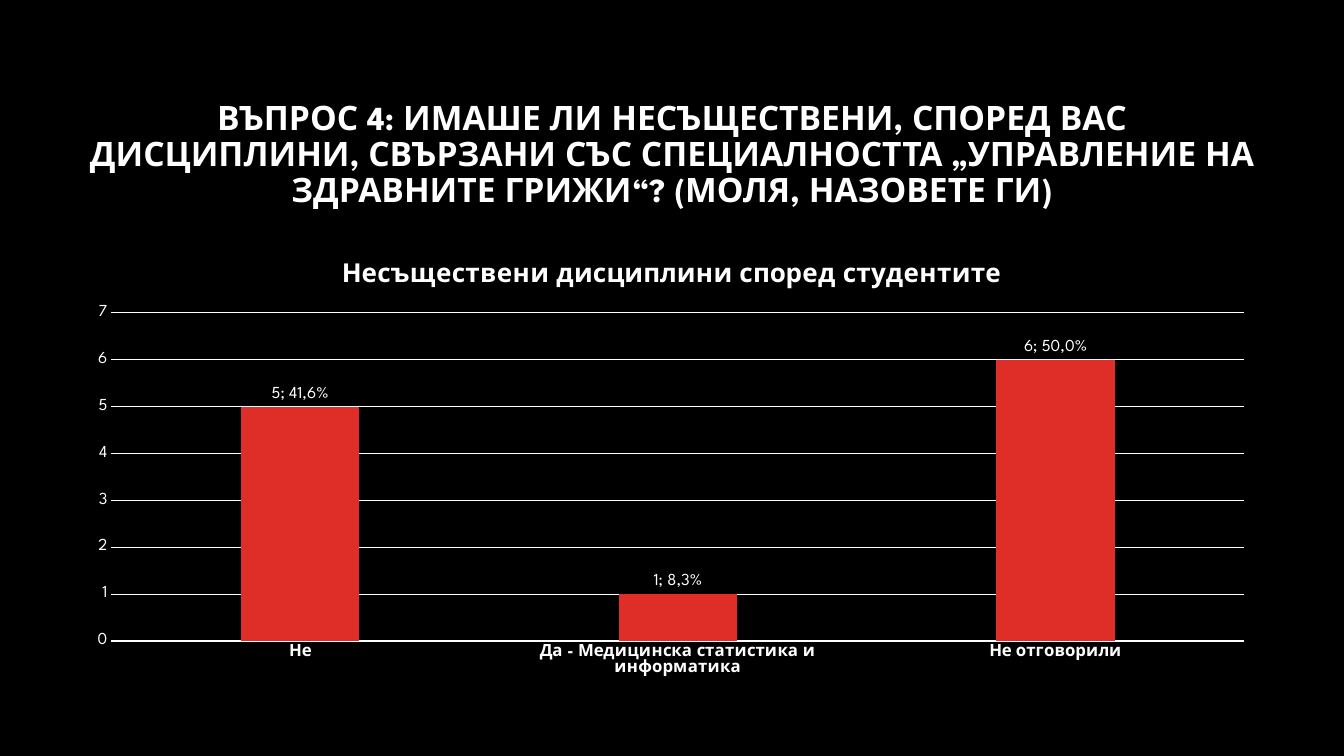
from lxml import etree
from pptx import Presentation
from pptx.chart import data as chart_data
from pptx.dml.color import RGBColor
from pptx.enum import chart as ch, text as tx
from pptx.oxml import ns
from pptx.util import Inches, Pt

COLORS = {"background": "000000", "light": "FFFFFF", "bar": "DF2E28"}
FONT = "League Spartan"
QUESTION = ("ВЪПРОС 4: ИМАШЕ ЛИ НЕСЪЩЕСТВЕНИ, СПОРЕД ВАС ДИСЦИПЛИНИ, "
            "СВЪРЗАНИ СЪС СПЕЦИАЛНОСТТА „УПРАВЛЕНИЕ НА ЗДРАВНИТЕ ГРИЖИ“? "
            "(МОЛЯ, НАЗОВЕТЕ ГИ)")
CHART_TITLE = "Несъществени дисциплини според студентите"
ANSWERS = [
    ("Не", 5, "5; 41,6%"),
    ("Да - Медицинска статистика и информатика", 1, "1; 8,3%"),
    ("Не отговорили", 6, "6; 50,0%"),
]
# Inner plot area as fractions of the chart
PLOT_LAYOUT = {"x": 0.03, "y": 0.16, "w": 0.95, "h": 0.74}


def color(name):
    return RGBColor.from_string(COLORS[name])


def set_attributes(target, **values):
    for name, value in values.items():
        setattr(target, name, value)


def format_font(font, size, bold=False):
    set_attributes(font, name=FONT, size=Pt(size), bold=bold)
    font.color.rgb = color("light")


def format_line(line):
    line.color.rgb = color("light")
    line.width = Pt(0.75)


def add_question(slide):
    question = slide.shapes.title
    set_attributes(question, left=Inches(0.75), top=Inches(0.84),
                   width=Inches(11.83), height=Inches(1.41))
    frame = question.text_frame
    set_attributes(frame, text=QUESTION, word_wrap=True,
                   auto_size=tx.MSO_AUTO_SIZE.NONE,
                   vertical_anchor=tx.MSO_ANCHOR.MIDDLE)
    paragraph = frame.paragraphs[0]
    set_attributes(paragraph, alignment=tx.PP_ALIGN.CENTER, line_spacing=0.9)
    format_font(paragraph.runs[0].font, 24, True)


def format_axes(chart):
    for axis, bold in ((chart.category_axis, True), (chart.value_axis, False)):
        set_attributes(axis, major_tick_mark=ch.XL_TICK_MARK.NONE,
                       minor_tick_mark=ch.XL_TICK_MARK.NONE)
        format_font(axis.tick_labels.font, 12, bold)
    format_line(chart.category_axis.format.line)

    values = chart.value_axis
    set_attributes(values, minimum_scale=0, maximum_scale=7, major_unit=1,
                   has_major_gridlines=True)
    values.format.line.fill.background()
    format_line(values.major_gridlines.format.line)


def label_bars(series):
    for index, (_, _, label) in enumerate(ANSWERS):
        data_label = series.points[index].data_label
        data_label.text_frame.text = label
        data_label.position = ch.XL_LABEL_POSITION.OUTSIDE_END
        format_font(data_label.text_frame.paragraphs[0].runs[0].font, 12)


def place_plot(chart):
    plot_area = chart.element.find(".//" + ns.qn("c:plotArea"))
    for old_layout in plot_area.findall(ns.qn("c:layout")):
        plot_area.remove(old_layout)
    layout = etree.Element(ns.qn("c:layout"))
    manual = etree.SubElement(layout, ns.qn("c:manualLayout"))
    settings = {"layoutTarget": "inner", "xMode": "edge", "yMode": "edge",
                **PLOT_LAYOUT}
    for name, value in settings.items():
        etree.SubElement(manual, ns.qn(f"c:{name}")).set("val", str(value))
    plot_area.insert(0, layout)


def add_answer_chart(slide):
    answers = chart_data.CategoryChartData()
    answers.categories = [name for name, _, _ in ANSWERS]
    answers.add_series(CHART_TITLE, [count for _, count, _ in ANSWERS])
    chart = slide.shapes.add_chart(
        ch.XL_CHART_TYPE.COLUMN_CLUSTERED, Inches(0.75), Inches(2.4),
        Inches(11.83), Inches(4.4), answers).chart
    format_font(chart.font, 10)
    set_attributes(chart, has_legend=False, has_title=True)

    # Chart title
    heading = chart.chart_title
    heading.include_in_layout = False
    heading.text_frame.text = CHART_TITLE
    format_font(heading.text_frame.paragraphs[0].runs[0].font, 18.6, True)

    # Bars
    bars = chart.plots[0]
    set_attributes(bars, gap_width=219, overlap=-27, vary_by_categories=False)
    series = bars.series[0]
    series.format.fill.solid()
    series.format.fill.fore_color.rgb = color("bar")
    label_bars(series)

    format_axes(chart)
    place_plot(chart)


def main():
    prs = Presentation()
    set_attributes(prs, slide_width=Inches(13.33), slide_height=Inches(7.5))
    slide = prs.slides.add_slide(prs.slide_layouts[5])
    background = slide.background.fill
    background.solid()
    background.fore_color.rgb = color("background")
    add_question(slide)
    add_answer_chart(slide)
    prs.save("out.pptx")


if __name__ == "__main__":
    main()
